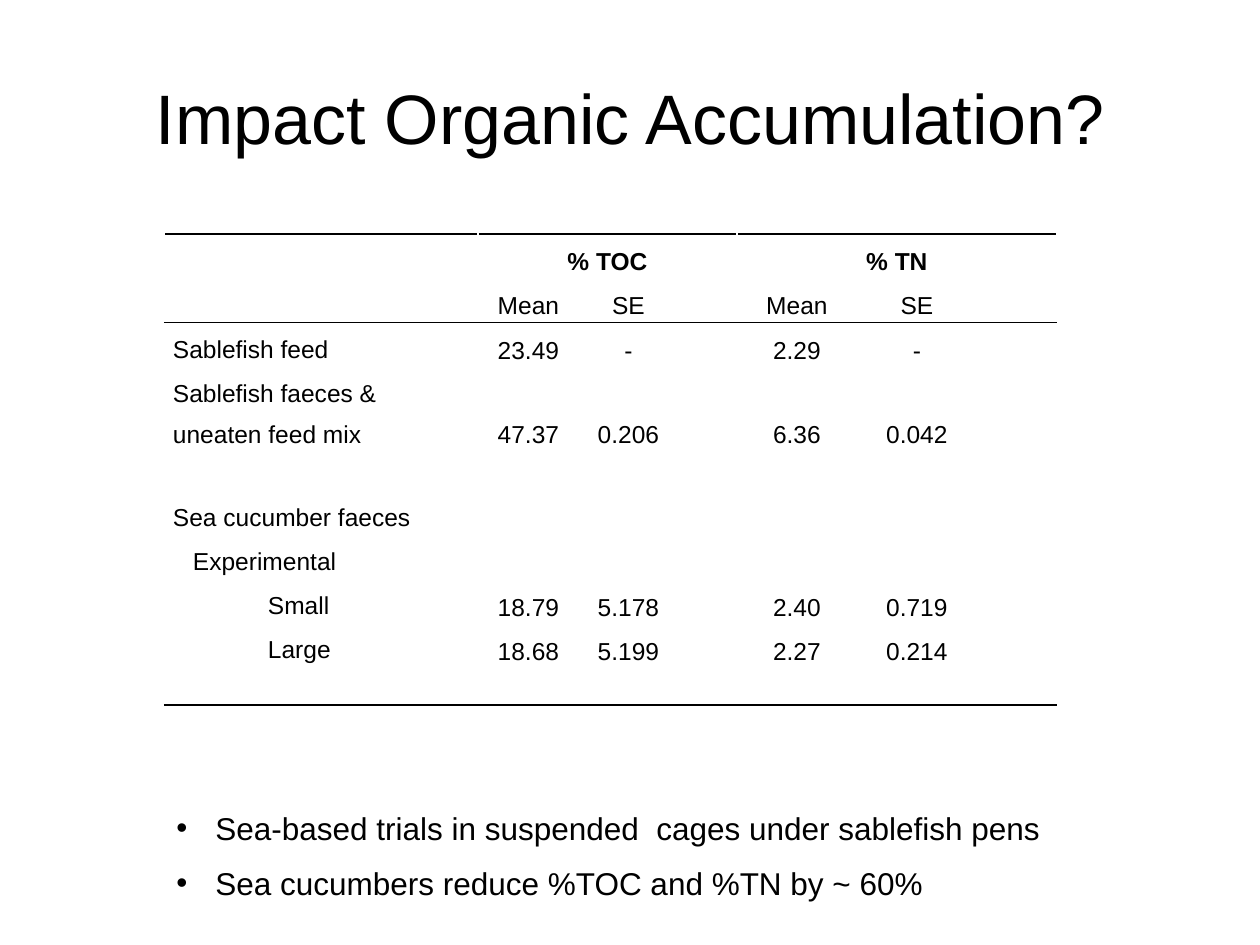
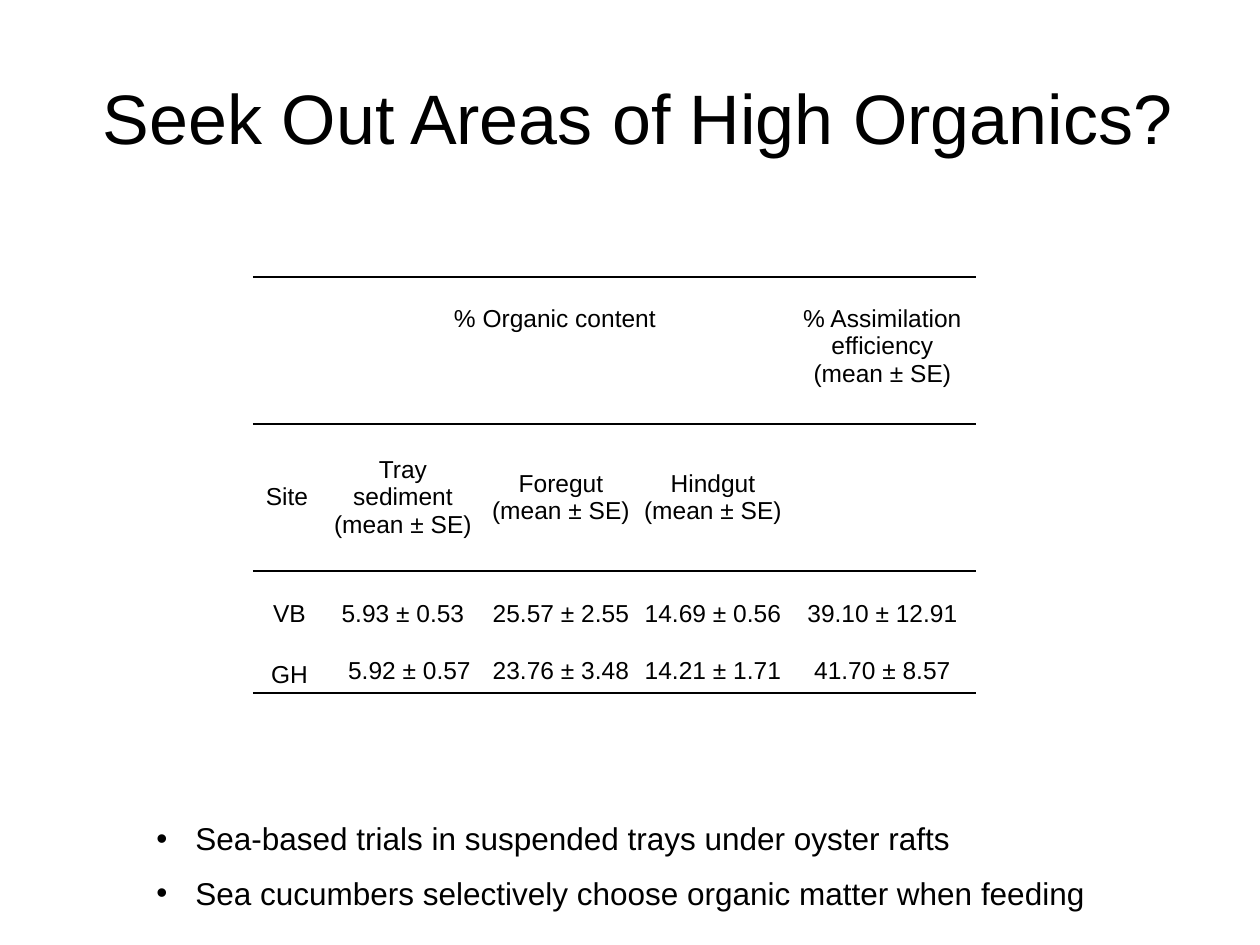
import dataclasses

import pptx
import pptx.dml.color
import pptx.enum.text
import pptx.oxml
import pptx.oxml.ns
import pptx.util

Pt = pptx.util.Pt
Align = pptx.enum.text.PP_ALIGN
Anchor = pptx.enum.text.MSO_ANCHOR
PLAIN_TABLE = "{2D5ABB26-0587-4C30-8999-92F81FD0307C}"


@dataclasses.dataclass(frozen=True)
class Theme:
    font: str = "Arial"
    ink: str = "000000"
    paper: str = "FFFFFF"
    title: int = 40
    bullet: int = 18
    table: int = 14
    rule: float = 1
    heavy_rule: float = 1.5


THEME = Theme()


def px(length):
    return pptx.util.Emu(round(length * 914400 / 126))


def style(paragraph, size, align=Align.LEFT, bold=False):
    paragraph.alignment = align
    font = paragraph.font
    font.name, font.size, font.bold = THEME.font, Pt(size), bold
    font.color.rgb = pptx.dml.color.RGBColor.from_string(THEME.ink)
    add_xml(paragraph._p, "endParaRPr", sz=size * 100)


def indent(paragraph, left, first=0):
    properties = paragraph._p.get_or_add_pPr()
    properties.set("marL", str(px(left)))
    properties.set("indent", str(px(first)))
    return properties


def add_xml(parent, tag, inner="", **attributes):
    listed = "".join(f' {name}="{value}"' for name, value in attributes.items())
    namespace = pptx.oxml.ns.nsdecls("a")
    parent.append(pptx.oxml.parse_xml(f"<a:{tag} {namespace}{listed}>{inner}</a:{tag}>"))


def add_text_frame(slide, box):
    frame = slide.shapes.add_textbox(*map(px, box)).text_frame
    frame.word_wrap = True
    return frame


def add_title(slide, box, wording):
    frame = add_text_frame(slide, box)
    frame.vertical_anchor = Anchor.MIDDLE
    heading = frame.paragraphs[0]
    heading.text = wording
    style(heading, THEME.title, Align.CENTER)


def add_findings(slide, box, findings):
    frame = add_text_frame(slide, box)
    for index, finding in enumerate(findings):
        paragraph = frame.add_paragraph() if index else frame.paragraphs[0]
        paragraph.text = finding
        if index:
            paragraph.space_before = px(17)
        properties = indent(paragraph, 39, -39)
        add_xml(properties, "buFont", typeface=THEME.font)
        add_xml(properties, "buChar", char="•")
        style(paragraph, THEME.bullet)


def add_grid(slide, box, widths, heights):
    frame = slide.shapes.add_table(len(heights), len(widths), *map(px, box))
    table = frame.table
    table.first_row = table.horz_banding = False
    table._tbl.tblPr.find(pptx.oxml.ns.qn("a:tableStyleId")).text = PLAIN_TABLE
    for column, width in zip(table.columns, widths):
        column.width = px(width)
    for row, height in zip(table.rows, heights):
        row.height = px(height)
    return table


def fill_cell(cell, wording, side, spacing=1, align=Align.CENTER,
              anchor=Anchor.MIDDLE, bold=False, shift=0, top=0):
    cell.margin_left = cell.margin_right = px(side)
    cell.margin_top, cell.margin_bottom = px(top), 0
    cell.vertical_anchor = anchor
    cell.text = wording
    for paragraph in cell.text_frame.paragraphs:
        paragraph.line_spacing = spacing
        if shift:
            indent(paragraph, shift)
        style(paragraph, THEME.table, align, bold)


def rule_cell(cell, edges):
    properties = cell._tc.get_or_add_tcPr()
    for edge in "LRTB":
        if edge in edges:
            color, width = edges[edge]
            fill = f'<a:solidFill><a:srgbClr val="{color}"/></a:solidFill>'
            add_xml(properties, "ln" + edge, fill, w=Pt(width))
    cell.fill.background()


def rule_table(table, top_width, ruled_rows, divided=False):
    divider = (THEME.paper, THEME.rule)
    for r in range(len(table.rows)):
        for c in range(len(table.columns)):
            cell, edges = table.cell(r, c), {}
            if r == 0:
                edges["T"] = (THEME.ink, top_width)
                if divided and not cell.is_spanned:
                    edges.update(L=divider, R=divider)
            if r in ruled_rows:
                edges["B"] = (THEME.ink, THEME.rule)
            rule_cell(cell, edges)


def add_accumulation_table(slide, box):
    rows = [
        ("", "", "% TOC", "", "", "% TN", "", ""),
        ("", "", "Mean", "SE", "", "Mean", "SE", ""),
        ("Sablefish feed", "", "23.49", "-", "", "2.29", "-", ""),
        ("Sablefish faeces & uneaten feed mix", "", "47.37", "0.206", "", "6.36", "0.042", ""),
        ("Sea cucumber faeces", "", "", "", "", "", "", ""),
        ("Experimental", "", "", "", "", "", "", ""),
        ("", "Small", "18.79", "5.178", "", "2.40", "0.719", ""),
        ("", "Large", "18.68", "5.199", "", "2.27", "0.214", ""),
        ("", "", "", "", "", "", "", ""),
    ]
    table = add_grid(slide, box, (95, 219, 101, 99, 59, 120, 120, 80),
                     (41, 42, 41, 124, 42, 41, 41, 42, 38))
    for r, row in enumerate(rows):
        for c, wording in enumerate(row):
            label = c < 2
            fill_cell(table.cell(r, c), wording, 9,
                      spacing=1.5 if wording else 1,
                      align=Align.LEFT if label else Align.CENTER,
                      anchor=Anchor.TOP if label or r < 2 else Anchor.MIDDLE,
                      bold=r == 0,
                      shift=20 if wording == "Experimental" else 0)
    for r in range(6):
        table.cell(r, 0).merge(table.cell(r, 1))
    for first, last in ((2, 4), (5, 7)):
        table.cell(0, first).merge(table.cell(0, last))
    rule_table(table, THEME.heavy_rule, (1, 8), divided=True)


def add_organics_table(slide, box):
    headings = [
        ("", "% Organic content", "", "", "% Assimilation\nefficiency\n(mean ± SE)"),
        ("Site", "Tray sediment\n(mean ± SE)", "Foregut\n(mean ± SE)",
         "Hindgut\n(mean ± SE)", ""),
    ]
    sites = [
        ("VB", "5.93 ± 0.53", "25.57 ± 2.55", "14.69 ± 0.56", "39.10 ± 12.91"),
        ("GH", "5.92 ± 0.57", "23.76 ± 3.48", "14.21 ± 1.71", "41.70 ± 8.57"),
    ]
    shifts = {"VB": 5, "GH": 5, "5.92 ± 0.57": 13}
    table = add_grid(slide, box, (68, 164, 152, 152, 187), (147, 147, 57, 63))
    for r, row in enumerate(headings + sites):
        for c, wording in enumerate(row):
            high = r == 0 or (r == 3 and c > 0)
            fill_cell(table.cell(r, c), wording, 7,
                      spacing=2 if r > 1 else 1,
                      anchor=Anchor.TOP if high else Anchor.MIDDLE,
                      shift=shifts.get(wording, 0),
                      top=28 if r == 0 else 0)
    table.cell(0, 1).merge(table.cell(0, 3))
    rule_table(table, THEME.rule, (0, 1, 3))


def build_accumulation_slide(slide):
    add_title(slide, (63, 38, 1134, 158), "Impact Organic Accumulation?")
    add_accumulation_table(slide, (164, 234, 893, 452))
    add_findings(slide, (164, 803, 903, 106), (
        "Sea-based trials in suspended  cages under sablefish pens",
        "Sea cucumbers reduce %TOC and %TN by ~ 60%",
    ))


def build_organics_slide(slide):
    add_title(slide, (25, 38, 1225, 158), "Seek Out Areas of High Organics?")
    add_findings(slide, (144, 813, 1002, 106), (
        "Sea-based trials in suspended trays under oyster rafts",
        "Sea cucumbers selectively choose organic matter when feeding",
    ))
    add_organics_table(slide, (253, 277, 723, 414))


def main():
    deck = pptx.Presentation()
    deck.slide_width, deck.slide_height = px(1260), px(945)
    for build in (build_accumulation_slide, build_organics_slide):
        build(deck.slides.add_slide(deck.slide_layouts[6]))
    deck.save("out.pptx")


if __name__ == "__main__":
    main()
